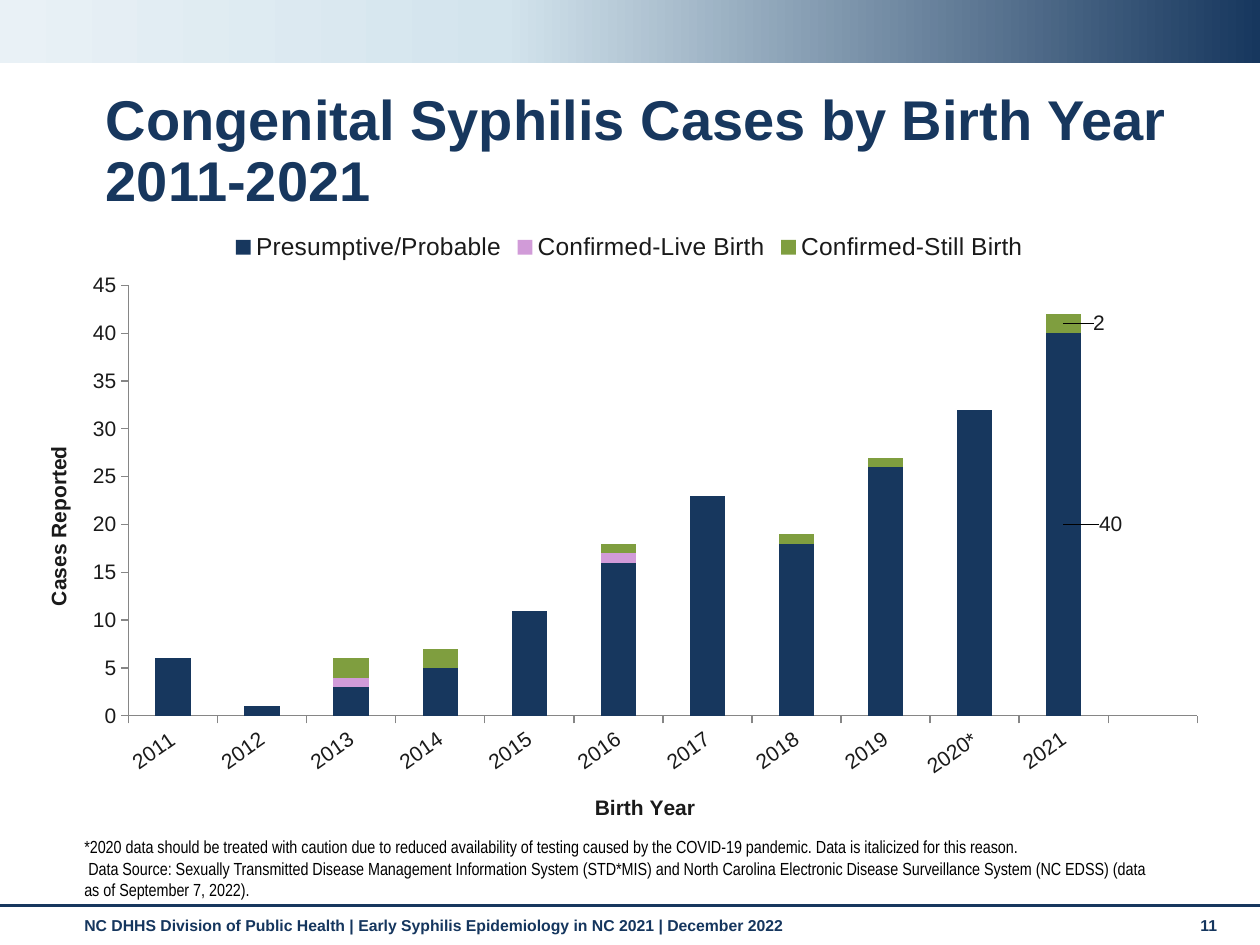
from copy import deepcopy

from lxml import etree
from pptx import Presentation
from pptx import util as u
from pptx.chart import data as chart_data
from pptx.dml import color
from pptx.enum import chart as charts, shapes, text
from pptx.oxml import parse_xml
from pptx.oxml import ns

NAVY = "17375E"
INK = "1A1A1A"
CHART_NS = "http://schemas.openxmlformats.org/drawingml/2006/chart"
YEARS = ["2011", "2012", "2013", "2014", "2015", "2016",
         "2017", "2018", "2019", "2020*", "2021", ""]
SERIES = [
    ("Presumptive/Probable", NAVY, [6, 1, 3, 5, 11, 16, 23, 18, 26, 32, 40, None]),
    ("Confirmed-Live Birth", "D19BD8", [0, 0, 1, 0, 0, 1, 0, 0, 0, 0, 0, None]),
    ("Confirmed-Still Birth", "7F9E3F", [0, 0, 2, 2, 0, 1, 0, 1, 1, 0, 2, None]),
]
LABEL_SHIFTS = {"Presumptive/Probable": 0.04, "Confirmed-Still Birth": 0.03}


def rgb(value):
    return color.RGBColor.from_string(value)


def style_font(font, size, value, bold=False, name="Arial"):
    font.name = name
    font.size = u.Pt(size)
    font.bold = bold
    font.color.rgb = rgb(value)


def add_text(page, box, lines, size, value, bold=False, name="Arial",
             anchor=text.MSO_ANCHOR.TOP):
    frame = page.shapes.add_textbox(*map(u.Cm, box)).text_frame
    frame.word_wrap = True
    frame.vertical_anchor = anchor
    frame.text = "\n".join(lines)
    for para in frame.paragraphs:
        style_font(para.font, size, value, bold, name)


def add_band(page, box):
    band = page.shapes.add_shape(shapes.MSO_SHAPE.RECTANGLE, *map(u.Cm, box))
    band.shadow.inherit = False
    band.line.fill.background()
    band.fill.gradient()
    band.fill.gradient_angle = 180
    stop_list = band.element.find(".//" + ns.qn("a:gsLst"))
    stop_list.append(deepcopy(stop_list[-1]))
    stops = [(0, NAVY), (0.6, "D3E4ED"), (1, "E9F1F6")]
    for stop, (position, value) in zip(band.fill.gradient_stops, stops):
        stop.position = position
        stop.color.rgb = rgb(value)


def add_title(page, box):
    title = page.shapes.title
    title.left, title.top, title.width, title.height = map(u.Cm, box)
    frame = title.text_frame
    frame.auto_size = text.MSO_AUTO_SIZE.NONE
    frame.vertical_anchor = text.MSO_ANCHOR.TOP
    frame.text = "Congenital Syphilis Cases by Birth Year\v2011-2021"
    para = frame.paragraphs[0]
    para.alignment = text.PP_ALIGN.LEFT
    para.line_spacing = 0.9
    style_font(para.font, 32, NAVY, True)


def add_footer(page, box):
    left, top, width, height = box
    rule = page.shapes.add_connector(
        shapes.MSO_CONNECTOR.STRAIGHT,
        u.Cm(left), u.Cm(top), u.Cm(left + width), u.Cm(top))
    rule.line.color.rgb = rgb(NAVY)
    rule.line.width = u.Pt(1.75)
    etree.SubElement(rule.element.spPr, ns.qn("a:effectLst"))
    credit = ("NC DHHS Division of Public Health | "
              "Early Syphilis Epidemiology in NC 2021 | December 2022")
    for offset, span_width, words in [(1.45, 22.2, credit), (23.95, 1.12, "11")]:
        add_text(page, (left + offset, top + 0.08, span_width, height),
                 [words], 9, "15365E", True)


def manual_layout(**places):
    parts = "".join(f'<c:{tag} val="{value}"/>' for tag, value in places.items())
    return parse_xml(f'<c:layout xmlns:c="{CHART_NS}"><c:manualLayout>'
                     f'{parts}</c:manualLayout></c:layout>')


def label_last_year(series, shift):
    series.data_labels.show_value = False
    label = series.points[YEARS.index("2021")].data_label
    label.position = charts.XL_LABEL_POSITION.CENTER
    labels = series.data_labels._element
    labels.find(ns.qn("c:dLbl")).insert(1, manual_layout(x=shift, y=0))


def format_axis(axis, title):
    axis.has_major_gridlines = False
    axis.major_tick_mark = charts.XL_TICK_MARK.OUTSIDE
    axis.minor_tick_mark = charts.XL_TICK_MARK.NONE
    axis.format.line.color.rgb = rgb("868686")
    style_font(axis.tick_labels.font, 12, INK)
    axis.axis_title.text_frame.text = title
    style_font(axis.axis_title.text_frame.paragraphs[0].font, 12, INK, True)


def add_case_chart(page, box):
    data = chart_data.CategoryChartData()
    data.categories = YEARS
    for name, _, values in SERIES:
        data.add_series(name, values)
    chart = page.shapes.add_chart(
        charts.XL_CHART_TYPE.COLUMN_STACKED, *map(u.Cm, box), data).chart
    style_font(chart.font, 12, INK)
    chart.has_title = False
    chart.has_legend = True
    chart.legend.position = charts.XL_LEGEND_POSITION.TOP
    chart.legend.include_in_layout = False
    style_font(chart.legend.font, 14, INK)

    format_axis(chart.category_axis, "Birth Year")
    format_axis(chart.value_axis, "Cases Reported")
    chart.value_axis.minimum_scale = 0
    chart.value_axis.maximum_scale = 45
    chart.value_axis.major_unit = 5
    tick_body = chart.category_axis._element.find(
        ns.qn("c:txPr") + "/" + ns.qn("a:bodyPr"))
    tick_body.set("rot", "-2100000")

    plot = chart.plots[0]
    plot.gap_width = 150
    plot.overlap = 100
    plot.vary_by_categories = False
    for series, (name, value, _) in zip(plot.series, SERIES):
        series.format.fill.solid()
        series.format.fill.fore_color.rgb = rgb(value)
        if name in LABEL_SHIFTS:
            label_last_year(series, LABEL_SHIFTS[name])

    area = chart._chartSpace.chart.plotArea
    for old in area.findall(ns.qn("c:layout")):
        area.remove(old)
    area.insert(0, manual_layout(layoutTarget="inner", xMode="edge", yMode="edge",
                                 x=0.07, y=0.11, w=0.91, h=0.7))
    for tag, value in [("x", 0.074), ("y", 0.107), ("w", 0.909), ("h", 0.696)]:
        area[0].find(".//" + ns.qn("c:" + tag)).set("val", str(value))


def main():
    deck = Presentation()
    deck.slide_width, deck.slide_height = u.Cm(25.4), u.Cm(19.05)
    page = deck.slides.add_slide(deck.slide_layouts[5])
    add_band(page, (0, 0, 25.4, 1.27))
    add_footer(page, (0, 18.26, 25.4, 0.75))
    add_title(page, (1.88, 1.73, 23.19, 1.52))
    add_text(page, (1.45, 17.35, 22.2, 0.91), [
        "*2020 data should be treated with caution due to reduced availability of "
        "testing caused by the COVID-19 pandemic. Data is italicized for this reason.",
        " Data Source: Sexually Transmitted Disease Management Information System "
        "(STD*MIS) and North Carolina Electronic Disease Surveillance System (NC EDSS) "
        "(data as of September 7, 2022).",
    ], 10, "000000", name="Arial Narrow", anchor=text.MSO_ANCHOR.BOTTOM)
    add_case_chart(page, (0.84, 4.42, 23.7, 12.47))
    deck.save("out.pptx")


if __name__ == "__main__":
    main()
